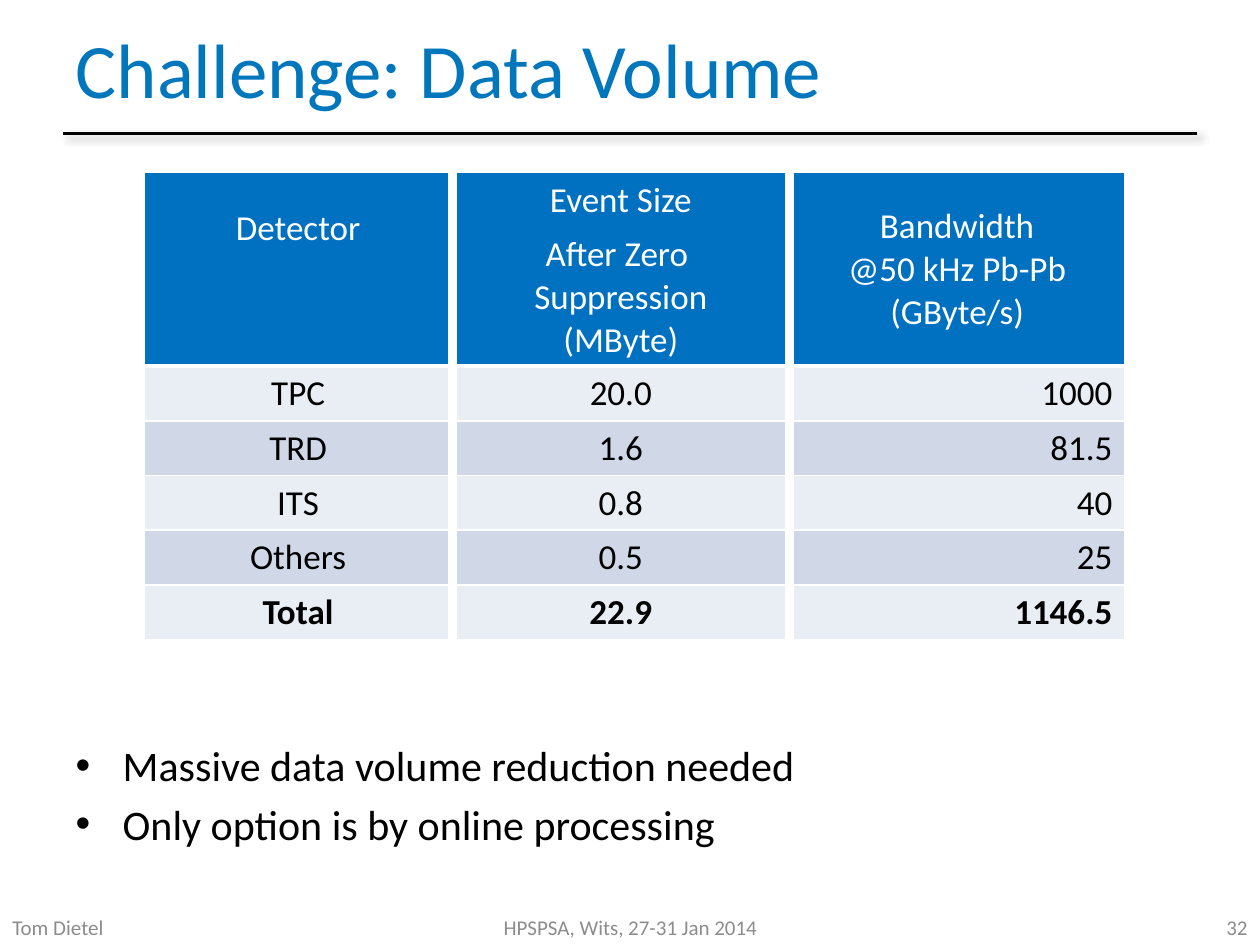
from lxml.etree import SubElement
from pptx import Presentation
from pptx.dml.color import RGBColor
from pptx.enum.shapes import MSO_CONNECTOR
from pptx.enum.text import MSO_ANCHOR, MSO_AUTO_SIZE, PP_ALIGN
from pptx.oxml.ns import qn
from pptx.util import Cm, Pt

TITLE_BLUE = RGBColor(0x00, 0x76, 0xBC)
HEADER_BLUE = RGBColor(0x00, 0x70, 0xC0)
BAND_LIGHT = RGBColor(0xE9, 0xED, 0xF4)
BAND_DARK = RGBColor(0xD0, 0xD8, 0xE8)
FOOTER_GREY = RGBColor(0x8C, 0x8C, 0x8C)
BLACK = RGBColor(0x00, 0x00, 0x00)
WHITE = RGBColor(0xFF, 0xFF, 0xFF)

LEFT, CENTER, RIGHT = PP_ALIGN.LEFT, PP_ALIGN.CENTER, PP_ALIGN.RIGHT
HEADER_ROWS = [
    [["Detector"], ["Event Size"], ["Bandwidth", "@50 kHz Pb-Pb", "(GByte/s)"]],
    [None, ["After Zero ", "Suppression", "(MByte)"], None],
]
DATA_ROWS = [
    ["TPC", "20.0", "1000"],
    ["TRD", "1.6", "81.5"],
    ["ITS", "0.8", "40"],
    ["Others", "0.5", "25"],
    ["Total", "22.9", "1146.5"],
]
COLUMN_WIDTHS = [6.22, 6.79, 6.77]
ROW_HEIGHTS = [1.1, 2.8] + [1.1] * len(DATA_ROWS)


class SlideBuilder:
    font = "Calibri"

    def __init__(self, slide):
        self.s = slide

    def add_lines(self, tf, lines, size, color, align=LEFT, bold=False):
        for i, line in enumerate(lines):
            p = tf.paragraphs[0] if i == 0 else tf.add_paragraph()
            p.alignment = align
            r = p.add_run()
            r.text = line
            r.font.name = self.font
            r.font.size = Pt(size)
            r.font.bold = bold
            r.font.color.rgb = color

    def place(self, sp, left, top, width, height):
        sp.left, sp.top = Cm(left), Cm(top)
        sp.width, sp.height = Cm(width), Cm(height)

    def rule(self, x1, x2, y):
        line = self.s.shapes.add_connector(
            MSO_CONNECTOR.STRAIGHT, Cm(x1), Cm(y), Cm(x2), Cm(y))
        line.line.color.rgb = BLACK
        line.line.width = Pt(1.5)
        effects = SubElement(line._element.spPr, qn("a:effectLst"))
        shadow = SubElement(effects, qn("a:outerShdw"), blurRad=str(Pt(4)),
                            dist=str(Pt(3)), dir=str(45 * 60000), rotWithShape="0")
        color = SubElement(shadow, qn("a:srgbClr"), val=str(BLACK))
        SubElement(color, qn("a:alpha"), val="40000")

    def title(self, text, *box):
        sp = self.s.shapes.title
        self.place(sp, *box)
        tf = sp.text_frame
        tf.auto_size = MSO_AUTO_SIZE.NONE
        tf.vertical_anchor = MSO_ANCHOR.MIDDLE
        self.add_lines(tf, [text], 44, TITLE_BLUE)

    def bullets(self, lines, *box):
        sp = self.s.placeholders[1]
        self.place(sp, *box)
        tf = sp.text_frame
        tf.auto_size = MSO_AUTO_SIZE.NONE
        self.add_lines(tf, lines, 24, BLACK)
        for i, p in enumerate(tf.paragraphs):
            pPr = p._p.get_or_add_pPr()
            pPr.set("marL", str(Cm(0.95)))
            pPr.set("indent", str(-Cm(0.95)))
            SubElement(pPr, qn("a:buFont"), typeface="Arial")
            SubElement(pPr, qn("a:buChar"), char="•")
            p.space_before = Pt(4.8 if i else 0)

    def footer(self, text, align, *box):
        sp = self.s.shapes.add_textbox(*map(Cm, box))
        tf = sp.text_frame
        tf.word_wrap = True
        tf.vertical_anchor = MSO_ANCHOR.MIDDLE
        self.add_lines(tf, [text], 12, FOOTER_GREY, align)

    def borders(self, cell, **widths):
        tcPr = cell._tc.get_or_add_tcPr()
        for side in "LRTB":
            width = widths[side]
            ln = SubElement(tcPr, qn("a:ln" + side), w=str(Pt(width)))
            if width:
                fill = SubElement(ln, qn("a:solidFill"))
                SubElement(fill, qn("a:srgbClr"), val=str(WHITE))
            else:
                SubElement(ln, qn("a:noFill"))

    def table(self, left, top):
        rows = HEADER_ROWS + [[[text] for text in row] for row in DATA_ROWS]
        heads, last_col = len(HEADER_ROWS), len(COLUMN_WIDTHS) - 1
        table = self.s.shapes.add_table(
            len(rows), len(COLUMN_WIDTHS), Cm(left), Cm(top),
            Cm(sum(COLUMN_WIDTHS)), Cm(sum(ROW_HEIGHTS))).table
        table.first_row = table.horz_banding = False
        for column, width in zip(table.columns, COLUMN_WIDTHS):
            column.width = Cm(width)
        for row, height in zip(table.rows, ROW_HEIGHTS):
            row.height = Cm(height)
        for c in (0, last_col):
            table.cell(0, c).merge(table.cell(heads - 1, c))
        edges = [1, 0, 3] + [1] * len(DATA_ROWS)
        for i, row in enumerate(rows):
            header = i < heads
            band = BAND_DARK if (i - heads) % 2 else BAND_LIGHT
            for c, lines in enumerate(row):
                cell = table.cell(i, c)
                merged = header and c != 1
                self.borders(cell, L=6 if c else 1, R=6 if c < last_col else 1,
                             T=edges[i], B=3 if merged else edges[i + 1])
                cell.fill.solid()
                cell.fill.fore_color.rgb = HEADER_BLUE if header else band
                if lines:
                    align = RIGHT if c == last_col and not header else CENTER
                    self.add_lines(cell.text_frame, lines, 20,
                                   WHITE if header else BLACK,
                                   align, bold=i == len(rows) - 1)
        for c in (1, last_col):
            table.cell(0, c).vertical_anchor = MSO_ANCHOR.MIDDLE
        detector = table.cell(0, 0)
        detector.vertical_anchor = MSO_ANCHOR.TOP
        detector.margin_top = Cm(0.7)


def main():
    prs = Presentation()
    prs.slide_width, prs.slide_height = Cm(25.4), Cm(19.05)
    b = SlideBuilder(prs.slides.add_slide(prs.slide_layouts[1]))
    b.rule(1.27, 24.13, 2.69)
    b.title("Challenge: Data Volume", 1.27, 0, 22.86, 2.72)
    b.footer("HPSPSA, Wits, 27-31 Jan 2014", CENTER, 4.62, 18.34, 16.18, 0.69)
    b.footer("Tom Dietel", LEFT, 0, 18.34, 4.32, 0.71)
    b.footer("32", RIGHT, 21.72, 18.34, 3.68, 0.69)
    b.bullets(["Massive data volume reduction needed",
               "Only option is by online processing"], 1.27, 14.78, 22.86, 2.79)
    b.table(2.9, 3.48)
    prs.save("out.pptx")


if __name__ == "__main__":
    main()
